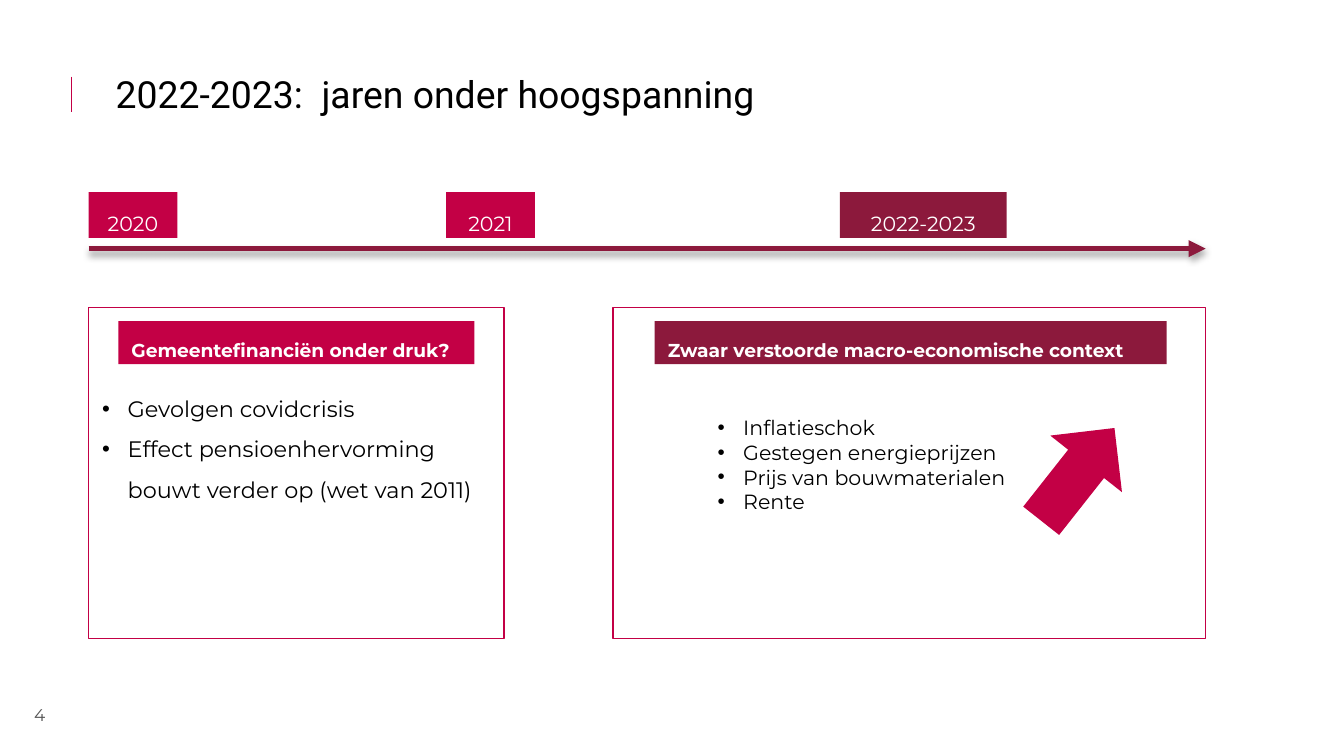
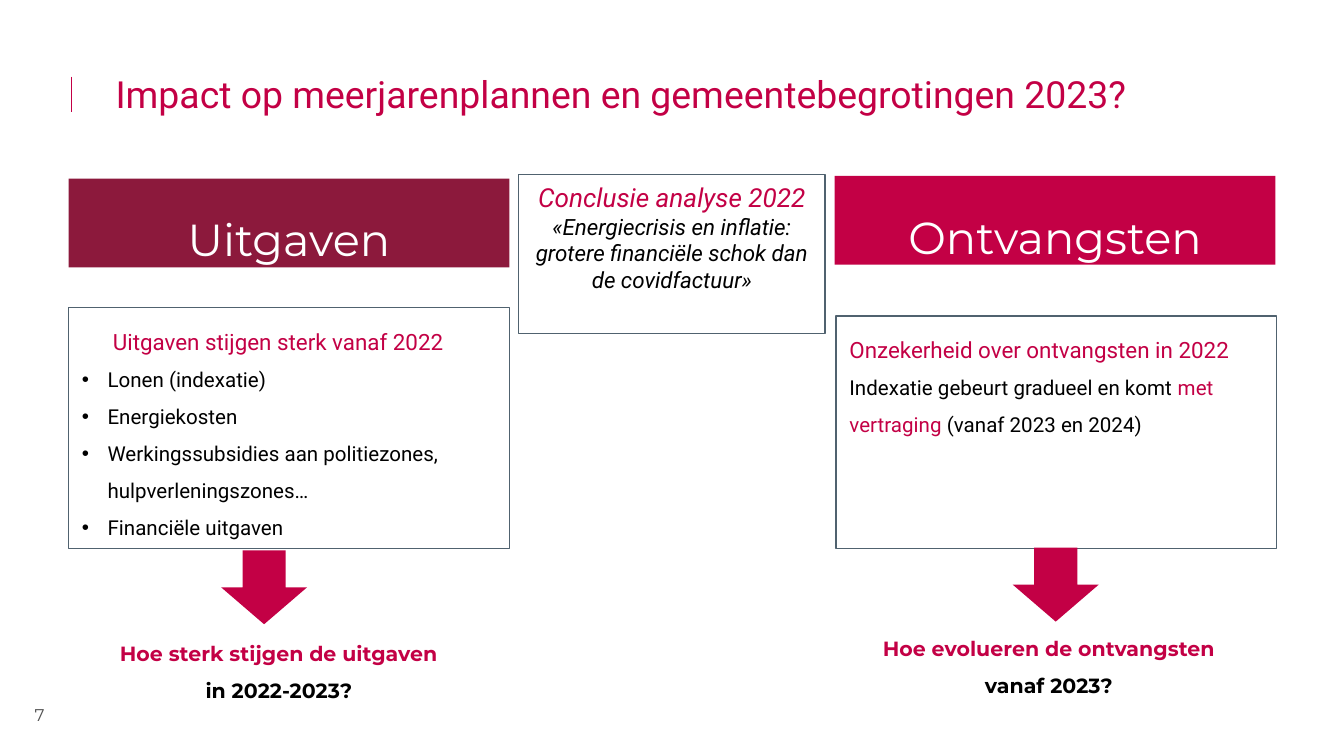
from dataclasses import dataclass

from lxml import etree
from pptx import Presentation
from pptx.dml.color import RGBColor
from pptx.enum.dml import MSO_LINE
from pptx.enum.shapes import MSO_CONNECTOR, MSO_SHAPE
from pptx.enum.text import MSO_ANCHOR, MSO_AUTO_SIZE, PP_ALIGN
from pptx.oxml.ns import qn
from pptx.util import Emu, Inches, Pt

LEFT, CENTER = PP_ALIGN.LEFT, PP_ALIGN.CENTER
TOP, MIDDLE = MSO_ANCHOR.TOP, MSO_ANCHOR.MIDDLE
RECTANGLE, RIGHT_ARROW = MSO_SHAPE.RECTANGLE, MSO_SHAPE.RIGHT_ARROW
STRAIGHT, SOLID = MSO_CONNECTOR.STRAIGHT, MSO_LINE.SOLID
NO_FIT = MSO_AUTO_SIZE.NONE

COLORS = {
    "red": "C30045",
    "wine": "8C193C",
    "slate": "50626F",
    "gray": "535353",
    "black": "000000",
    "white": "FFFFFF",
}
HEADING_FONT, LABEL_FONT = "Roboto", "Montserrat"
TWO_CONTENT_LAYOUT = 3

SLIDE_WIDTH, SLIDE_HEIGHT = Inches(10), Inches(5.625)
CELL = SLIDE_WIDTH / 100  # square grid: 100 columns wide
BULLET_INDENT = 1.9  # columns
LOOSE = 1.5  # line spacing


@dataclass(frozen=True)
class Area:
    """A rectangle in grid columns and rows."""
    column: float
    row: float
    columns: float
    rows: float

    def lengths(self) -> tuple:
        return tuple(grid(value) for value in
                     (self.column, self.row, self.columns, self.rows))


@dataclass(frozen=True)
class Band:
    area: Area
    text: str
    color: str
    size: float
    bold: bool = False
    align: PP_ALIGN = CENTER


@dataclass(frozen=True)
class BlockArrow:
    area: Area
    rotation: float


def grid(cells: float) -> Emu:
    return Emu(round(cells * CELL))


def rgb(color: str) -> RGBColor:
    return RGBColor.from_string(COLORS[color])


def place(shape, area: Area) -> None:
    shape.left, shape.top, shape.width, shape.height = area.lengths()


def prepare_frame(shape, anchor=TOP):
    frame = shape.text_frame
    frame.word_wrap = True
    frame.auto_size = NO_FIT
    frame.vertical_anchor = anchor
    return frame


def add_text(shape, text: str, *, size: float, color: str = "black",
             font: str = LABEL_FONT, bold: bool = False, italic: bool = False,
             align=LEFT, spacing: float = 1.0, margin: float = 0,
             bullet: bool = False, same_paragraph: bool = False) -> None:
    """Add a formatted paragraph, or continue the last one."""
    frame = shape.text_frame
    paragraph = frame.paragraphs[-1]
    if not same_paragraph:
        if paragraph.runs:
            paragraph = frame.add_paragraph()
        properties = paragraph._p.get_or_add_pPr()
        hanging = BULLET_INDENT if bullet else 0
        properties.set("marL", str(grid(margin + hanging)))
        properties.set("indent", str(-grid(hanging)))
        if bullet:
            etree.SubElement(properties, qn("a:buFont"), typeface="Arial")
            etree.SubElement(properties, qn("a:buChar"), char="•")
        else:
            etree.SubElement(properties, qn("a:buNone"))
        paragraph.alignment = align
        paragraph.line_spacing = spacing
        paragraph.space_before = Pt(0)
    run = paragraph.add_run()
    run.text = text
    run.font.name = font
    run.font.size = Pt(size)
    run.font.bold = bold
    run.font.italic = italic
    run.font.color.rgb = rgb(color)


def add_text_box(slide, area: Area):
    box = slide.shapes.add_textbox(*area.lengths())
    prepare_frame(box)
    return box


def add_filled_shape(slide, kind, area: Area, color: str):
    shape = slide.shapes.add_shape(kind, *area.lengths())
    shape.shadow.inherit = False
    shape.fill.solid()
    shape.fill.fore_color.rgb = rgb(color)
    shape.line.fill.background()
    return shape


def add_band(slide, band: Band) -> None:
    shape = add_filled_shape(slide, RECTANGLE, band.area, band.color)
    prepare_frame(shape)
    add_text(shape, band.text, size=band.size, color="white", bold=band.bold,
             align=band.align, spacing=LOOSE)


def add_block_arrow(slide, arrow: BlockArrow) -> None:
    shape = add_filled_shape(slide, RIGHT_ARROW, arrow.area, "red")
    shape.rotation = arrow.rotation


def outline(shape, color: str) -> None:
    shape.line.dash_style = SOLID
    shape.line.color.rgb = rgb(color)
    shape.line.width = Pt(0.75)


def use_body(slide, index: int, area: Area, color: str, top_inset: float = 0.5):
    body = slide.placeholders[index]
    place(body, area)
    outline(body, color)
    prepare_frame(body).margin_top = grid(top_inset)
    return body


def add_line(slide, start: tuple, end: tuple, color: str, width: float):
    """Draw a straight line without the theme's shadow."""
    line = slide.shapes.add_connector(
        STRAIGHT, *(grid(value) for value in (*start, *end)))
    line.line.color.rgb = rgb(color)
    line.line.width = Pt(width)
    etree.SubElement(line._element.spPr, qn("a:effectLst"))
    return line


def add_timeline(slide) -> None:
    line = add_line(slide, (6.6, 18.5), (89.7, 18.5), "wine", 3)
    properties = line._element.spPr
    etree.SubElement(properties.find(qn("a:ln")), qn("a:tailEnd"),
                     type="triangle")
    shadow = etree.SubElement(
        properties.find(qn("a:effectLst")), qn("a:outerShdw"),
        blurRad=str(Pt(3.1)), dist=str(Pt(1.8)), dir="5400000",
        rotWithShape="0")
    tint = etree.SubElement(shadow, qn("a:srgbClr"), val=COLORS["black"])
    etree.SubElement(tint, qn("a:alpha"), val="35000")


def add_titled_slide(presentation, title: str, color: str, number: str):
    slide = presentation.slides.add_slide(
        presentation.slide_layouts[TWO_CONTENT_LAYOUT])
    place(slide.shapes.title, Area(7.6, 5.3, 89, 3.4))
    prepare_frame(slide.shapes.title, MIDDLE)
    add_text(slide.shapes.title, title, size=20, color=color, font=HEADING_FONT)
    add_line(slide, (5.3, 5.7), (5.3, 8.3), "red", 0.75)
    number_box = add_text_box(slide, Area(1.2, 52, 3.5, 2.3))
    frame = number_box.text_frame
    frame.margin_left = frame.margin_right = grid(0.4)
    frame.margin_top = frame.margin_bottom = grid(0.4)
    add_text(number_box, number, size=9.1, color="gray", align=CENTER)
    return slide


def build_timeline_slide(presentation) -> None:
    slide = add_titled_slide(
        presentation, "2022-2023:  jaren onder hoogspanning", "black", "4")

    pressure = use_body(slide, 1, Area(6.6, 22.9, 30.9, 24.6), "red", 5.5)
    for text in ("Gevolgen covidcrisis",
                 "Effect pensioenhervorming bouwt verder op (wet van 2011)"):
        add_text(pressure, text, size=12, spacing=LOOSE, bullet=True)

    context = use_body(slide, 2, Area(45.6, 22.9, 44.1, 24.6), "red", 8)
    for text in ("Inflatieschok", "Gestegen energieprijzen",
                 "Prijs van bouwmaterialen", "Rente"):
        add_text(context, text, size=11, margin=6.8, bullet=True)

    add_timeline(slide)
    add_block_arrow(slide, BlockArrow(Area(75.8, 31.9, 8.8, 6.8), 308.3))
    for band in (
        Band(Area(6.6, 14.3, 6.6, 3.4), "2020", "red", 11),
        Band(Area(33.2, 14.3, 6.6, 3.4), "2021", "red", 11),
        Band(Area(62.5, 14.3, 12.4, 3.4), "2022-2023", "wine", 11),
        Band(Area(8.8, 23.9, 26.5, 3.2), "Gemeentefinanciën onder druk?",
             "red", 10, True, LEFT),
        Band(Area(48.7, 23.9, 38.1, 3.2),
             "Zwaar verstoorde macro-economische context",
             "wine", 10, True, LEFT),
    ):
        add_band(slide, band)


def build_impact_slide(presentation) -> None:
    slide = add_titled_slide(
        presentation, "Impact op meerjarenplannen en gemeentebegrotingen 2023?",
        "red", "7")
    body_style = {"font": HEADING_FONT, "spacing": LOOSE}

    spending = use_body(slide, 1, Area(5.1, 22.9, 32.8, 17.9), "slate")
    add_text(spending, "Uitgaven stijgen sterk vanaf 2022", size=12,
             color="red", margin=2.3, **body_style)
    for text in ("Lonen (indexatie)", "Energiekosten",
                 "Werkingssubsidies aan politiezones, hulpverleningszones…",
                 "Financiële uitgaven"):
        add_text(spending, text, size=11, bullet=True, **body_style)

    income = use_body(slide, 2, Area(62.2, 23.5, 32.8, 17.3), "slate")
    add_text(income, "Onzekerheid over ontvangsten in 2022", size=12,
             color="red", **body_style)
    add_text(income, "Indexatie gebeurt gradueel en komt ", size=11, **body_style)
    for text, color in (("met vertraging ", "red"),
                        ("(vanaf 2023 en 2024)", "black")):
        add_text(income, text, size=11, color=color, font=HEADING_FONT,
                 same_paragraph=True)

    conclusion = add_text_box(slide, Area(38.6, 13, 22.8, 11.8))
    outline(conclusion, "slate")
    for text, size, color in (
        ("Conclusie analyse 2022", 14, "red"),
        ("«Energiecrisis en inflatie: grotere financiële schok dan "
         "de covidfactuur»", 12, "black"),
    ):
        add_text(conclusion, text, size=size, color=color, font=HEADING_FONT,
                 italic=True, align=CENTER)

    for band in (Band(Area(5.1, 13.3, 32.8, 6.6), "Uitgaven", "wine", 24),
                 Band(Area(62.1, 13.1, 32.8, 6.6), "Ontvangsten", "red", 24)):
        add_band(slide, band)
    for column, row in ((16.9, 40.5), (75.8, 40.3)):
        add_block_arrow(slide, BlockArrow(Area(column, row, 5.5, 6.4), 90))

    for area, topic, period in (
        (Area(6.7, 46.3, 28.1, 7.1), "Hoe sterk stijgen de uitgaven",
         "in 2022-2023?"),
        (Area(64, 45.9, 28.1, 7.1), "Hoe evolueren de ontvangsten",
         "vanaf 2023?"),
    ):
        question = add_text_box(slide, area)
        for text, color in ((topic, "red"), (period, "black")):
            add_text(question, text, size=11, color=color, bold=True,
                     align=CENTER, spacing=LOOSE)


def main() -> None:
    presentation = Presentation()
    presentation.slide_width = SLIDE_WIDTH
    presentation.slide_height = SLIDE_HEIGHT
    build_timeline_slide(presentation)
    build_impact_slide(presentation)
    presentation.save("out.pptx")


if __name__ == "__main__":
    main()
